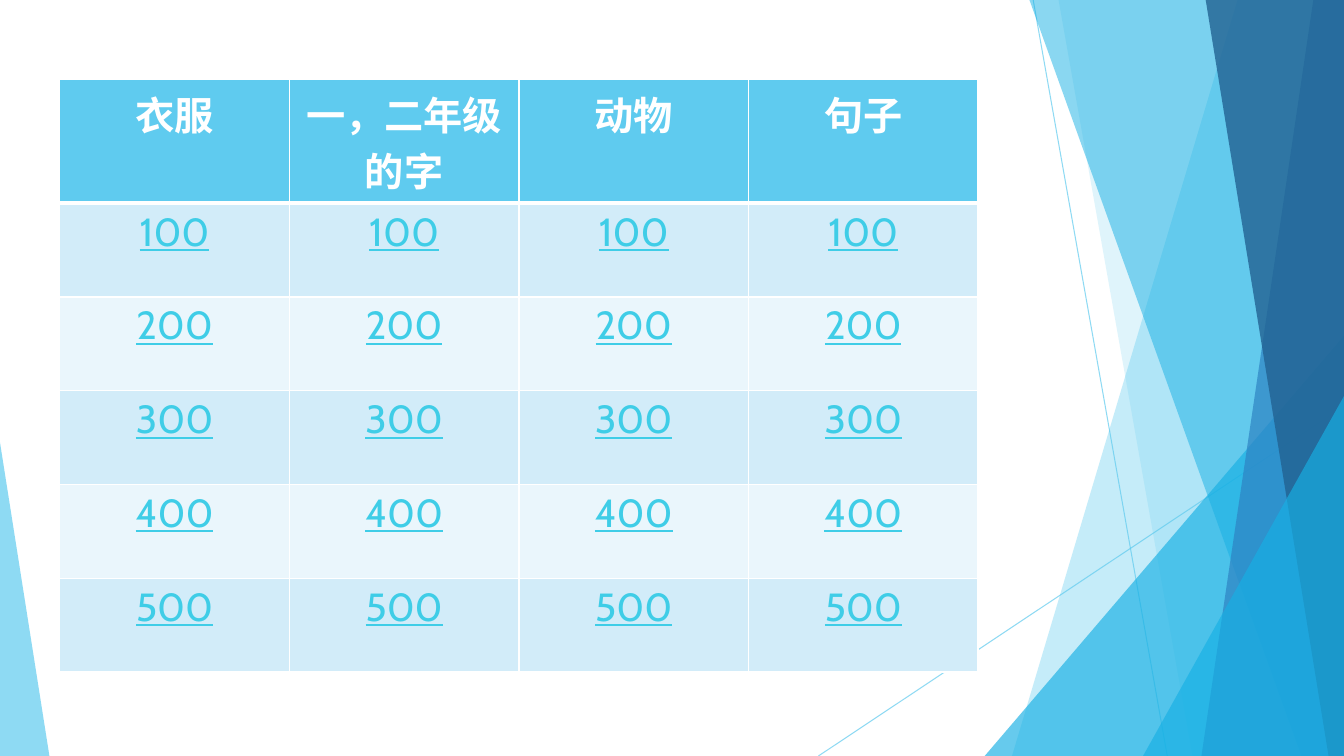
from dataclasses import dataclass

from lxml import etree
from pptx import Presentation
from pptx import util as u
from pptx.dml.color import RGBColor
from pptx.enum import shapes, text
from pptx.oxml.ns import qn

WIDTH, HEIGHT, BLEED_TOP = 960, 540, -0.7
SKY, CYAN, WHITE = "5FCBEF", "17B0E4", "FFFFFF"
HEADINGS = ["衣服", "一，二年级的字", "动物", "句子"]
VALUES = [100, 200, 300, 400, 500]
BAND_FILLS = ["D2ECF9", "EAF6FC"]
HEADER_FORMAT = {"size": u.Pt(28), "name": "Cabin", "bold": True}
VALUE_FORMAT = {"size": u.Pt(28), "name": "Cabin", "bold": False, "underline": True}


@dataclass
class Ray:
    start_x: float
    start_y: float
    end_x: float
    end_y: float


@dataclass
class Band:
    top_x: float
    bottom_x: float
    fill: str
    opacity: int


@dataclass
class Wedge:
    left: float
    top: float
    width: float
    apex: float
    fill: str
    opacity: int


RAYS = [Ray(738, 0, 833.8, HEIGHT), Ray(WIDTH, 290.2, 584.6, HEIGHT)]
FACETS = [
    Band(884.2, 722.9, SKY, 36),
    Band(756, 851.8, SKY, 20),
    Wedge(703.4, 239.8, 256.6, 1, CYAN, 66),
    Band(735.1, 929.5, CYAN, 50),
    Band(938.2, 858.2, "2E83C3", 70),
    Band(861.1, 949, "226292", 80),
    Wedge(816.5, 283, 143.5, 1, CYAN, 66),
    Wedge(0, 316.1, 35.3, 0, SKY, 70),
]


def color(value: str) -> RGBColor:
    return RGBColor.from_string(value)


def paint(fill, value: str) -> None:
    fill.solid()
    fill.fore_color.rgb = color(value)


def set_opacity(shape, percent: int) -> None:
    for node in shape._element.iter(qn("a:srgbClr")):
        etree.SubElement(node, qn("a:alpha"), val=str(percent * 1000))


def draw_ray(slide, ray: Ray) -> None:
    connector = slide.shapes.add_connector(
        shapes.MSO_CONNECTOR.STRAIGHT,
        u.Pt(ray.start_x), u.Pt(ray.start_y), u.Pt(ray.end_x), u.Pt(ray.end_y))
    connector.line.width = u.Pt(0.75)
    paint(connector.line.fill, SKY)
    set_opacity(connector, 70)
    etree.SubElement(connector._element.spPr, qn("a:effectLst"))


def add_band(slide, band: Band):
    corners = [(WIDTH, BLEED_TOP), (WIDTH, HEIGHT), (band.bottom_x, HEIGHT)]
    builder = slide.shapes.build_freeform(u.Pt(band.top_x), u.Pt(BLEED_TOP))
    builder.add_line_segments([(u.Pt(x), u.Pt(y)) for x, y in corners], close=True)
    return builder.convert_to_shape()


def add_wedge(slide, wedge: Wedge):
    shape = slide.shapes.add_shape(
        shapes.MSO_SHAPE.ISOSCELES_TRIANGLE, u.Pt(wedge.left), u.Pt(wedge.top),
        u.Pt(wedge.width), u.Pt(HEIGHT - wedge.top))
    shape.adjustments[0] = wedge.apex
    return shape


def draw_facet(slide, facet: Band | Wedge) -> None:
    shape = add_band(slide, facet) if isinstance(facet, Band) else add_wedge(slide, facet)
    shape.shadow.inherit = False
    shape.line.fill.background()
    paint(shape.fill, facet.fill)
    set_opacity(shape, facet.opacity)


def set_borders(cell, widths: dict[str, float]) -> None:
    properties = cell._tc.get_or_add_tcPr()
    for position, (side, width) in enumerate(widths.items()):
        line = etree.Element(qn(f"a:ln{side}"), w=str(u.Pt(width)))
        solid = etree.SubElement(line, qn("a:solidFill"))
        etree.SubElement(solid, qn("a:srgbClr"), val=WHITE)
        properties.insert(position, line)


def write_cell(cell, content: str, fill: str, font_color: str, formats: dict) -> None:
    paint(cell.fill, fill)
    paragraph = cell.text_frame.paragraphs[0]
    paragraph.alignment = text.PP_ALIGN.CENTER
    run = paragraph.add_run()
    run.text = content
    for name, value in formats.items():
        setattr(run.font, name, value)
    run.font.color.rgb = color(font_color)


def draw_board(slide) -> None:
    row_count, column_count, row_height = len(VALUES) + 1, len(HEADINGS), 67
    table = slide.shapes.add_table(
        row_count, column_count, u.Pt(42.7), u.Pt(57),
        u.Pt(656), u.Pt(row_height * row_count)).table
    for row in range(row_count):
        for column, heading in enumerate(HEADINGS):
            cell = table.cell(row, column)
            if row == 0:
                write_cell(cell, heading, SKY, WHITE, HEADER_FORMAT)
            else:
                write_cell(cell, str(VALUES[row - 1]), BAND_FILLS[(row - 1) % 2],
                           "3FCDE7", VALUE_FORMAT)
            set_borders(cell, {"L": 1, "R": 1, "T": 3 if row == 1 else 1,
                               "B": 3 if row == 0 else 1})


def main() -> None:
    presentation = Presentation()
    presentation.slide_width = u.Pt(WIDTH)
    presentation.slide_height = u.Pt(HEIGHT)
    slide = presentation.slides.add_slide(presentation.slide_layouts[6])
    for ray in RAYS:
        draw_ray(slide, ray)
    for facet in FACETS:
        draw_facet(slide, facet)
    draw_board(slide)
    presentation.save("out.pptx")


if __name__ == "__main__":
    main()
